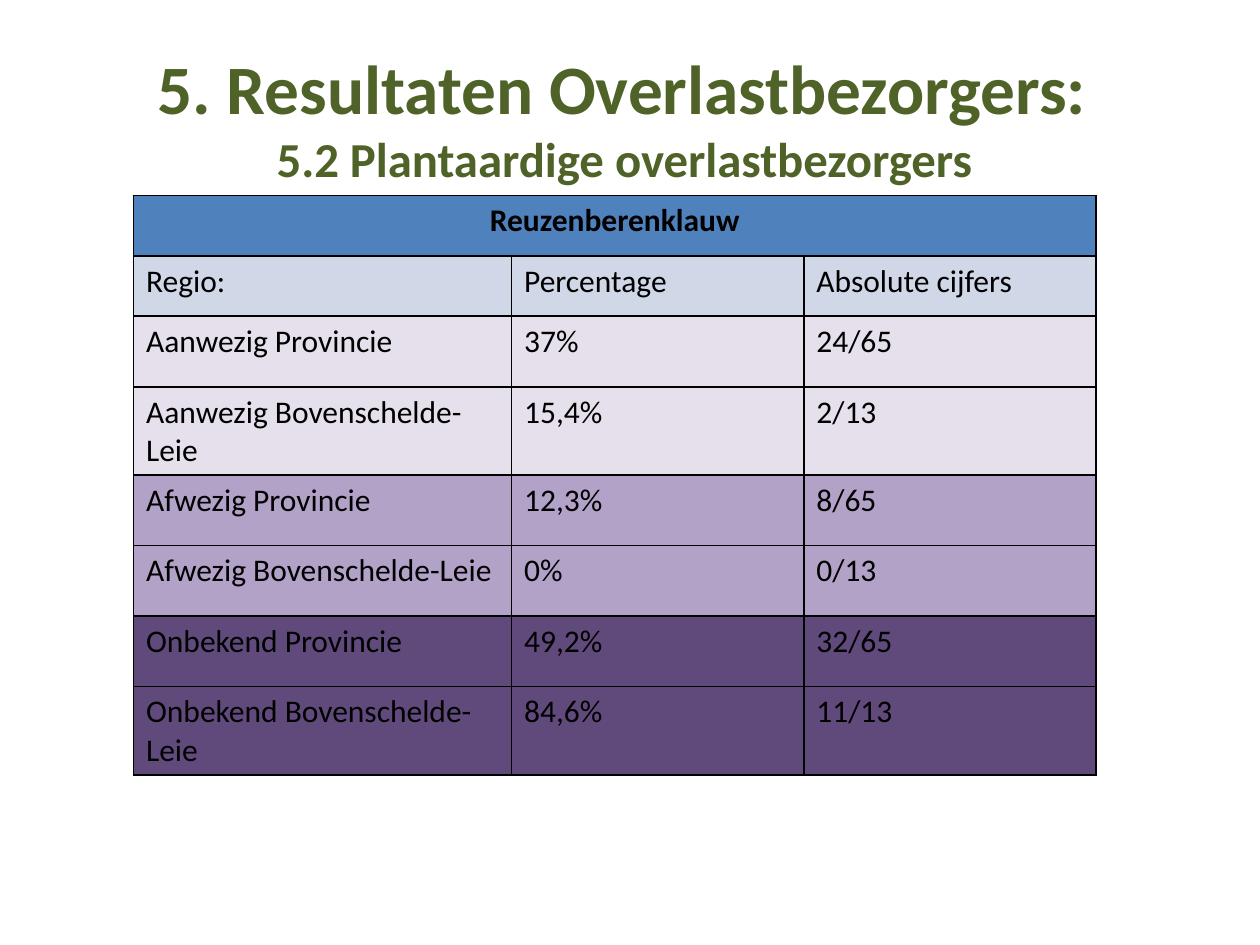
from dataclasses import dataclass

from lxml import etree
from pptx import Presentation
from pptx.dml.color import RGBColor
from pptx.enum.text import MSO_ANCHOR, PP_ALIGN
from pptx.oxml.ns import qn
from pptx.util import Inches, Pt

MIDDLE = MSO_ANCHOR.MIDDLE
CENTER = PP_ALIGN.CENTER
LEFT = PP_ALIGN.LEFT
BLANK_LAYOUT = 6
BORDER_SIDES = ("a:lnL", "a:lnR", "a:lnT", "a:lnB")


@dataclass(frozen=True)
class Theme:
    font: str = "Calibri"
    title_size: float = 39.6
    subtitle_size: float = 27.9
    table_size: float = 18
    border_width: float = 1
    title: str = "4F6228"
    text: str = "000000"
    border: str = "000000"
    header: str = "4F81BD"
    columns: str = "D0D8E8"
    present: str = "E6E0EC"
    absent: str = "B3A2C7"
    unknown: str = "604A7B"


class SlideBuilder:
    def __init__(self, slide, theme):
        self.slide = slide
        self.theme = theme

    def style(self, font, size, color, bold=False):
        values = {"name": self.theme.font, "size": Pt(size), "bold": bold}
        for name, value in values.items():
            setattr(font, name, value)
        font.color.rgb = RGBColor.from_string(color)

    def title(self, box, lines):
        frame = self.slide.shapes.add_textbox(*map(Inches, box)).text_frame
        frame.word_wrap = True
        frame.vertical_anchor = MIDDLE
        paragraph = frame.paragraphs[0]
        paragraph.alignment = CENTER
        for index, (text, size) in enumerate(lines):
            if index:
                paragraph.add_line_break()
            run = paragraph.add_run()
            run.text = text
            self.style(run.font, size, self.theme.title, bold=True)

    def borders(self, cell):
        properties = cell._tc.get_or_add_tcPr()
        for position, side in enumerate(BORDER_SIDES):
            line = etree.Element(qn(side), w=str(Pt(self.theme.border_width)))
            fill = etree.SubElement(line, qn("a:solidFill"))
            etree.SubElement(fill, qn("a:srgbClr"), val=self.theme.border)
            properties.insert(position, line)

    def cell(self, cell, text, fill, heading):
        cell.fill.solid()
        cell.fill.fore_color.rgb = RGBColor.from_string(fill)
        self.borders(cell)
        paragraph = cell.text_frame.paragraphs[0]
        paragraph.alignment = CENTER if heading else LEFT
        paragraph.text = text
        self.style(paragraph.font, self.theme.table_size, self.theme.text, heading)

    def table(self, left, top, widths, heights, heading, rows):
        box = map(Inches, (left, top, sum(widths), sum(heights)))
        table = self.slide.shapes.add_table(len(heights), len(widths), *box).table
        for column, width in zip(table.columns, widths):
            column.width = Inches(width)
        for row, height in zip(table.rows, heights):
            row.height = Inches(height)
        heading_texts = [heading] + [""] * (len(widths) - 1)
        all_rows = [(self.theme.header, heading_texts)] + rows
        for row_index, (fill, texts) in enumerate(all_rows):
            for column_index, text in enumerate(texts):
                cell = table.cell(row_index, column_index)
                self.cell(cell, text, fill, heading=row_index == 0)
        table.cell(0, 0).merge(table.cell(0, len(widths) - 1))


def main():
    presentation = Presentation()
    presentation.slide_width = Inches(10)
    presentation.slide_height = Inches(7.5)
    theme = Theme()
    slide = presentation.slides.add_slide(presentation.slide_layouts[BLANK_LAYOUT])
    builder = SlideBuilder(slide, theme)

    builder.title((0.5, 0.3, 9, 1.25), [
        ("5. Resultaten Overlastbezorgers: ", theme.title_size),
        ("5.2 Plantaardige overlastbezorgers ", theme.subtitle_size),
    ])

    rows = [
        (theme.columns, ["Regio:", "Percentage", "Absolute cijfers"]),
        (theme.present, ["Aanwezig Provincie", "37%", "24/65"]),
        (theme.present, ["Aanwezig Bovenschelde-Leie", "15,4%", "2/13"]),
        (theme.absent, ["Afwezig Provincie", "12,3%", "8/65"]),
        (theme.absent, ["Afwezig Bovenschelde-Leie", "0%", "0/13"]),
        (theme.unknown, ["Onbekend Provincie", "49,2%", "32/65"]),
        (theme.unknown, ["Onbekend Bovenschelde-Leie", "84,6%", "11/13"]),
    ]
    builder.table(1.06, 1.55, [3, 2.32, 2.32], [0.48] * 2 + [0.56] * 6,
                  "Reuzenberenklauw", rows)

    presentation.save("out.pptx")


if __name__ == "__main__":
    main()
